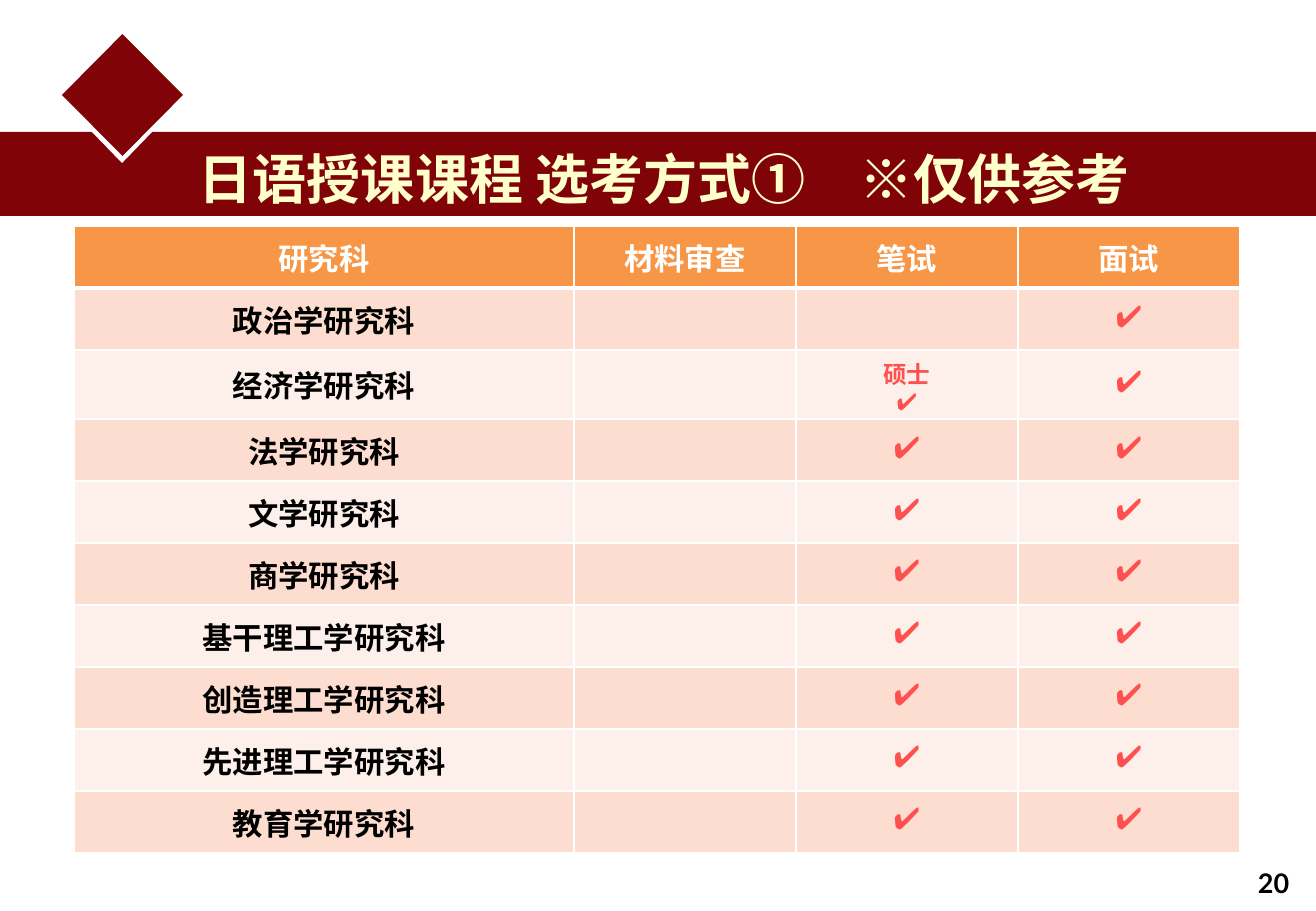
from lxml import etree
from pptx import Presentation
from pptx.dml.color import RGBColor
from pptx.enum.shapes import MSO_SHAPE
from pptx.enum.text import MSO_ANCHOR, PP_ALIGN
from pptx.oxml.ns import qn
from pptx.util import Emu, Pt

RECT, TRIANGLE, DIAMOND = MSO_SHAPE.RECTANGLE, MSO_SHAPE.ISOSCELES_TRIANGLE, MSO_SHAPE.DIAMOND
LEFT, CENTER = PP_ALIGN.LEFT, PP_ALIGN.CENTER
TOP, MIDDLE = MSO_ANCHOR.TOP, MSO_ANCHOR.MIDDLE

WHITE = RGBColor(0xFF, 0xFF, 0xFF)
BLACK = RGBColor(0, 0, 0)
MAROON = RGBColor(0x80, 0x03, 0x07)
CREAM = RGBColor(0xFF, 0xFF, 0xCC)
ORANGE = RGBColor(0xF7, 0x96, 0x46)
PEACH = RGBColor(0xFC, 0xDD, 0xCF)
PALE = RGBColor(0xFD, 0xEF, 0xE9)
RED = RGBColor(0xFF, 0x50, 0x50)
HAN, BODY, MONO, DIGIT = "Noto Sans CJK SC", "Roboto", "Courier New", "Lato"

TITLE = "日语授课课程 选考方式①　※仅供参考"
PAGE = "20"
TICK = "✔"
HEADS = ["研究科", "材料审查", "笔试", "面试"]
# school, document review, written test, interview
SCHOOLS = [
    ("政治学研究科", "", "", TICK),
    ("经济学研究科", "", "硕士\n" + TICK, TICK),
    ("法学研究科", "", TICK, TICK),
    ("文学研究科", "", TICK, TICK),
    ("商学研究科", "", TICK, TICK),
    ("基干理工学研究科", "", TICK, TICK),
    ("创造理工学研究科", "", TICK, TICK),
    ("先进理工学研究科", "", TICK, TICK),
    ("教育学研究科", "", TICK, TICK),
]
SHAPES = [
    (RECT, MAROON, 0, (0, 132, 1318, 84)),
    (TRIANGLE, WHITE, 180, (91, 131, 62, 32)),
    (DIAMOND, MAROON, 0, (62, 34, 121, 122)),
]
TITLE_BOX = (187, 140, 988, 78)
PAGE_BOX = (1246, 861, 70, 45)
GRID_AT = (74, 226)
COLS = [500, 222, 222, 222]
ROW = 62
SCALE = 7526


def px(n):
    return Emu(n * SCALE)


def write(frame, text, align, color, size, face):
    """Fill a text frame, one paragraph for each line."""
    frame.word_wrap = True
    frame.text = text
    form = {"size": Pt(size), "bold": True, "name": face}
    for para in frame.paragraphs:
        para.alignment = align
        for run in para.runs:
            for key, value in form.items():
                setattr(run.font, key, value)
            run.font.color.rgb = color
            if run.text == TICK:
                run.font.name = MONO
            else:
                east = etree.SubElement(run.font._element, qn("a:ea"))
                east.set("typeface", HAN)


def edge(cell, widths):
    """Draw white borders; widths are points for left, right, top, bottom."""
    props = cell._tc.get_or_add_tcPr()
    for spot, (side, width) in enumerate(zip("LRTB", widths)):
        line = etree.Element(qn(f"a:ln{side}"), w=str(Pt(width)))
        fill = etree.SubElement(line, qn("a:solidFill"))
        etree.SubElement(fill, qn("a:srgbClr"), val=str(WHITE))
        props.insert(spot, line)


def add_box(slide, box, *style):
    frame = slide.shapes.add_textbox(*map(px, box)).text_frame
    frame.vertical_anchor = TOP
    write(frame, *style)


def add_grid(slide):
    rows = [HEADS, *SCHOOLS]
    size = (sum(COLS), ROW * len(rows))
    table = slide.shapes.add_table(
        len(rows), len(COLS), *map(px, GRID_AT + size)).table
    table.horz_banding = False
    for col, width in zip(table.columns, COLS):
        col.width = px(width)
    for r, texts in enumerate(rows):
        table.rows[r].height = px(ROW)
        back = ORANGE if r == 0 else PEACH if r % 2 else PALE
        for c, text in enumerate(texts):
            cell = table.cell(r, c)
            cell.vertical_anchor = MIDDLE
            cell.fill.solid()
            cell.fill.fore_color.rgb = back
            edge(cell, (1, 1, 3 if r == 1 else 1, 3 if r == 0 else 1))
            color = WHITE if r == 0 else BLACK if c == 0 else RED
            write(cell.text_frame, text, CENTER, color,
                  14 if "\n" in text else 18, BODY)


def main():
    deck = Presentation()
    deck.slide_width, deck.slide_height = px(1316), px(911)
    slide = deck.slides.add_slide(deck.slide_layouts[6])
    for kind, color, turn, box in SHAPES:
        shape = slide.shapes.add_shape(kind, *map(px, box))
        shape.shadow.inherit = False
        shape.rotation = turn
        shape.fill.solid()
        shape.fill.fore_color.rgb = color
        shape.line.fill.background()
    add_box(slide, TITLE_BOX, TITLE, LEFT, CREAM, 32, HAN)
    add_grid(slide)
    add_box(slide, PAGE_BOX, PAGE, LEFT, BLACK, 16, DIGIT)
    deck.save("out.pptx")


if __name__ == "__main__":
    main()
